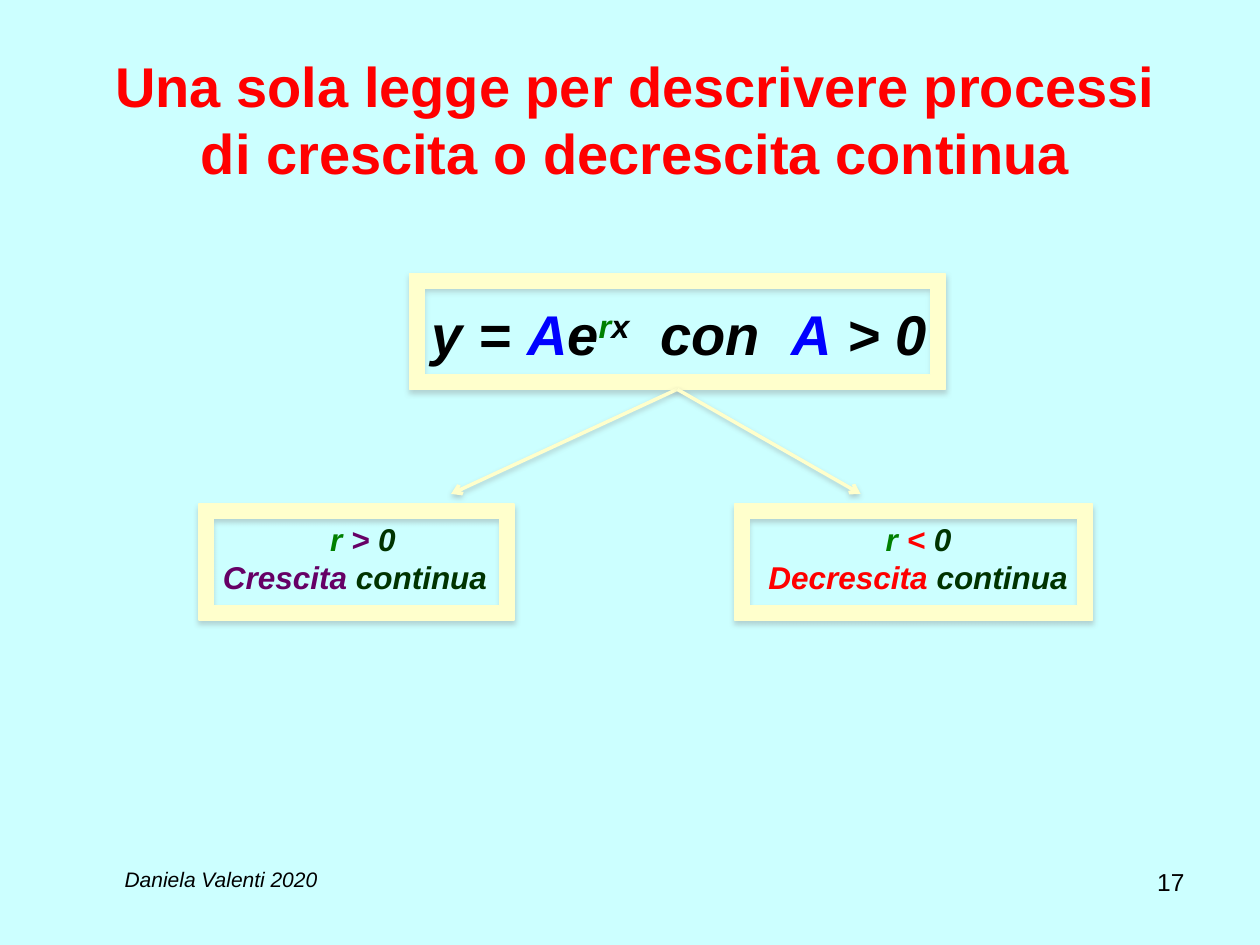
from lxml import etree
from pptx import Presentation
from pptx.dml.color import RGBColor
from pptx.enum.shapes import MSO_CONNECTOR, MSO_SHAPE
from pptx.enum.text import MSO_ANCHOR, MSO_AUTO_SIZE, PP_ALIGN
from pptx.oxml import parse_xml
from pptx.oxml.ns import nsdecls, qn
from pptx.util import Inches, Pt

LEFT, CENTER, RIGHT = PP_ALIGN.LEFT, PP_ALIGN.CENTER, PP_ALIGN.RIGHT
TOP, MIDDLE = MSO_ANCHOR.TOP, MSO_ANCHOR.MIDDLE
STRAIGHT, FRAME = MSO_CONNECTOR.STRAIGHT, MSO_SHAPE.FRAME

SKY = RGBColor(0xCC, 0xFF, 0xFF)
CREAM = RGBColor(0xFF, 0xFF, 0xCC)
BLACK = RGBColor(0, 0, 0)
RED = RGBColor(0xFF, 0, 0)
BLUE = RGBColor(0, 0, 0xFF)
GREEN = RGBColor(0, 0x80, 0)
DARK_GREEN = RGBColor(0, 0x33, 0)
PURPLE = RGBColor(0x66, 0, 0x66)

FRAME_HEIGHT = 0.92
BOTTOM = 2  # connection site


def place(sp, left, top, width, height):
    sp.left, sp.top = Inches(left), Inches(top)
    sp.width, sp.height = Inches(width), Inches(height)


def write(sp, paragraphs, size, anchor=TOP, **style):
    """Fill a shape with (alignment, [(text, colour, superscript), ...]) paragraphs."""
    tf = sp.text_frame
    tf.word_wrap = True
    tf.auto_size = MSO_AUTO_SIZE.NONE
    tf.vertical_anchor = anchor
    for i, (align, runs) in enumerate(paragraphs):
        p = tf.add_paragraph() if i else tf.paragraphs[0]
        p.alignment = align
        for text, color, *superscript in runs:
            r = p.add_run()
            r.text = text
            for name, value in {"name": "Arial", "size": Pt(size), **style}.items():
                setattr(r.font, name, value)
            r.font.color.rgb = color
            if superscript:
                r.font._element.set("baseline", "30000")


def add_text(s, box, paragraphs, size, **style):
    sp = s.shapes.add_textbox(*map(Inches, box))
    write(sp, paragraphs, size, **style)


def add_shadow(sp, alpha, distance):
    """Give a shape a soft grey shadow that falls straight down."""
    sp_pr = sp._element.spPr
    for old in sp_pr.findall(qn("a:effectLst")):
        sp_pr.remove(old)
    sp_pr.append(parse_xml(
        f'<a:effectLst {nsdecls("a")}>'
        f'<a:outerShdw blurRad="{Pt(3.1)}" dist="{Pt(distance)}" dir="5400000" rotWithShape="0">'
        f'<a:srgbClr val="808080"><a:alpha val="{alpha * 1000}"/></a:srgbClr>'
        '</a:outerShdw></a:effectLst>'))


def add_frame(s, left, top, width):
    sp = s.shapes.add_shape(FRAME, *map(Inches, (left, top, width, FRAME_HEIGHT)))
    sp.fill.solid()
    sp.fill.fore_color.rgb = CREAM
    sp.line.color.rgb = CREAM
    sp.line.width = Pt(0.75)
    add_shadow(sp, 35, 1.8)
    return sp


def add_arrow(s, frame, x, y):
    """Draw an arrow from the bottom of a frame to a point."""
    arrow = s.shapes.add_connector(STRAIGHT, 0, 0, Inches(x), Inches(y))
    arrow.begin_connect(frame, BOTTOM)
    arrow.line.color.rgb = CREAM
    arrow.line.width = Pt(2)
    etree.SubElement(arrow.line._get_or_add_ln(), qn("a:tailEnd"), type="arrow")
    add_shadow(arrow, 38, 1.6)


def add_case(s, frame_box, text_box, sign, word, color):
    """Add a framed case: the condition on r above the kind of process."""
    add_frame(s, *frame_box)
    add_text(s, text_box, [
        (CENTER, [("r ", GREEN), (sign, color), ("0", DARK_GREEN)]),
        (LEFT, [(word, color), (" continua", DARK_GREEN)]),
    ], 18, bold=True, italic=True)


def main():
    prs = Presentation()
    prs.slide_width, prs.slide_height = Inches(10), Inches(7.5)
    s = prs.slides.add_slide(prs.slide_layouts[5])
    s.background.fill.solid()
    s.background.fill.fore_color.rgb = SKY

    title = s.shapes.title
    place(title, 0.59, 0.35, 8.91, 1.18)
    heading = "Una sola legge per descrivere processi di crescita o decrescita continua"
    write(title, [(CENTER, [(heading, RED)])], 32, anchor=MIDDLE, bold=True)

    law = add_frame(s, 3.25, 2.17, 4.25)
    add_text(s, (3.33, 2.33, 4.33, 0.64), [(LEFT, [
        ("y = ", BLACK), ("A", BLUE), ("e", BLACK), ("r", GREEN, True), ("x", BLACK, True),
        ("  con  ", BLACK), ("A", BLUE), (" > 0", BLACK),
    ])], 32, bold=True, italic=True)

    add_case(s, (1.58, 4, 2.5), (1.67, 4.08, 2.42, 0.71), "> ", "Crescita", PURPLE)
    add_case(s, (5.83, 4, 2.84), (6, 4.08, 2.58, 0.71), "< ", "Decrescita", RED)
    for x in (3.58, 6.83):
        add_arrow(s, law, x, 3.92)

    add_text(s, (0.17, 6.83, 3.17, 0.52), [(CENTER, [("Daniela Valenti 2020", BLACK)])],
             12, italic=True)
    add_text(s, (7.17, 6.83, 2.33, 0.52), [(RIGHT, [("17", BLACK)])], 14)

    prs.save("out.pptx")


if __name__ == "__main__":
    main()
